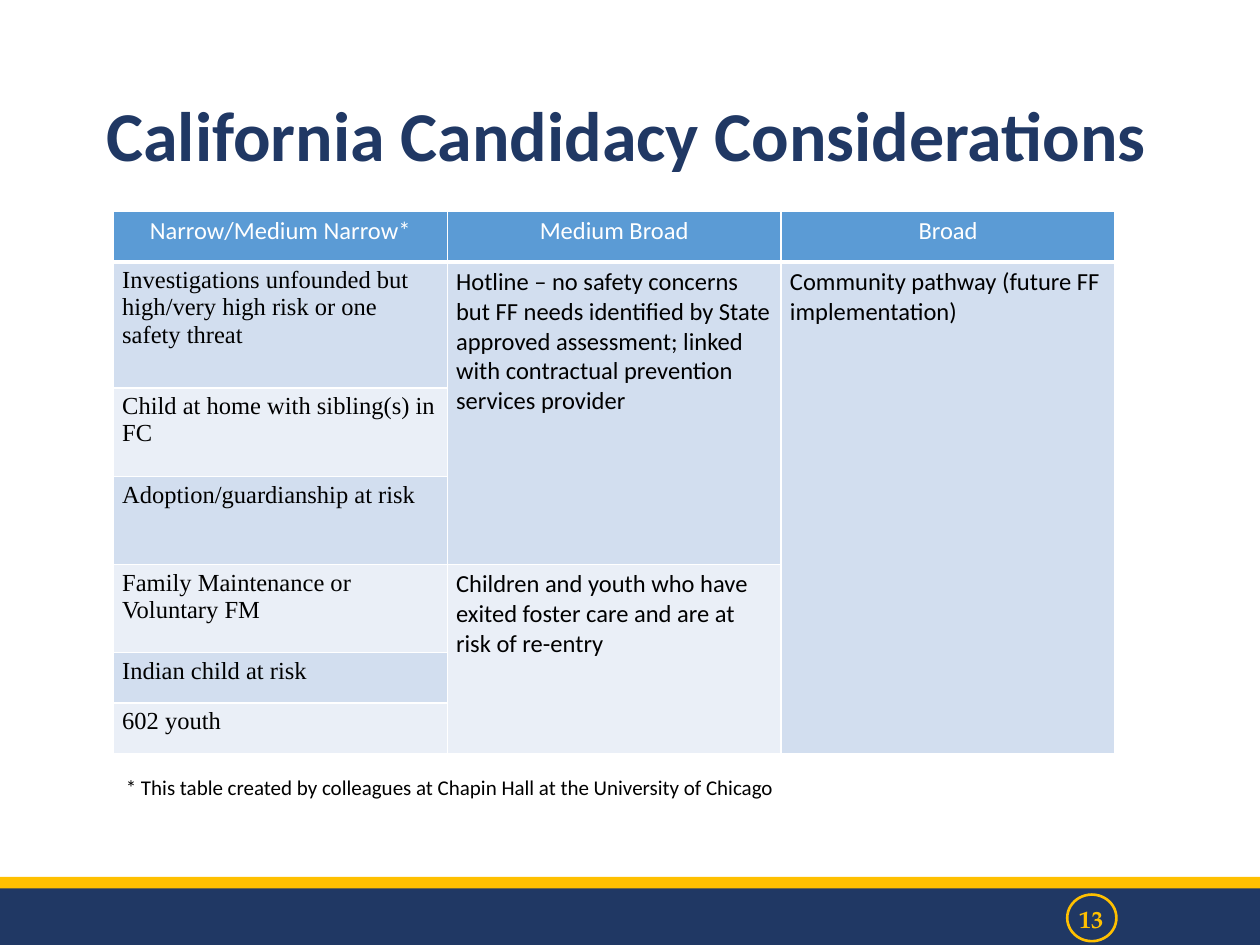
import dataclasses

import lxml.etree
import pptx
import pptx.dml.color
import pptx.enum.shapes
import pptx.enum.text
import pptx.oxml.ns
import pptx.util

Inches = pptx.util.Inches
Align = pptx.enum.text.PP_ALIGN
Anchor = pptx.enum.text.MSO_ANCHOR
Preset = pptx.enum.shapes.MSO_SHAPE


@dataclasses.dataclass(frozen=True)
class Theme:
    sans: str = "Calibri"
    serif: str = "Times New Roman"
    number_font: str = "TeX Gyre Pagella"
    navy: str = "203864"
    gold: str = "FFC000"
    white: str = "FFFFFF"
    black: str = "000000"
    header: str = "5B9BD5"
    bands: tuple = ("D2DEEF", "EAEFF7")
    title_size: int = 40
    body_size: int = 14
    note_size: int = 12
    thin_border: int = 1
    header_border: int = 3


def rgb(color):
    return pptx.dml.color.RGBColor.from_string(color)


class SlideBuilder:
    def __init__(self, slide, theme):
        self.slide = slide
        self.theme = theme

    def set_text(self, frame, text, size, color, font, bold=False, align=Align.LEFT):
        frame.text = text
        frame.word_wrap = True
        paragraph = frame.paragraphs[0]
        paragraph.alignment = align
        for run in paragraph.runs:
            run.font.size = pptx.util.Pt(size)
            run.font.name = font
            run.font.bold = bold
            run.font.color.rgb = rgb(color)
        return paragraph

    def text(self, box, text, size, color, font, anchor=Anchor.MIDDLE, **style):
        frame = self.slide.shapes.add_textbox(*map(Inches, box)).text_frame
        frame.vertical_anchor = anchor
        return self.set_text(frame, text, size, color, font, **style)

    def shape(self, preset, box, fill=None, line=None):
        shape = self.slide.shapes.add_shape(preset, *map(Inches, box))
        shape.shadow.inherit = False
        if fill:
            shape.fill.solid()
            shape.fill.fore_color.rgb = rgb(fill)
        else:
            shape.fill.background()
        if line:
            shape.line.color.rgb = rgb(line)
            shape.line.width = pptx.util.Pt(1.5)
        else:
            shape.line.fill.background()

    def borders(self, cell, bottom):
        properties = cell._tc.get_or_add_tcPr()
        qn = pptx.oxml.ns.qn
        for side in "LRTB":
            width = bottom if side == "B" else self.theme.thin_border
            line = lxml.etree.SubElement(
                properties, qn(f"a:ln{side}"), w=str(pptx.util.Pt(width)))
            fill = lxml.etree.SubElement(line, qn("a:solidFill"))
            lxml.etree.SubElement(fill, qn("a:srgbClr"), val=self.theme.white)

    def cell(self, cell, fill, bottom):
        self.borders(cell, bottom)
        cell.fill.solid()
        cell.fill.fore_color.rgb = rgb(fill)
        cell.margin_left = cell.margin_right = Inches(0.07)
        cell.margin_top = cell.margin_bottom = Inches(0.04)

    def table(self, left, top, column_width, row_heights, headings, entries):
        theme = self.theme
        rows, columns = len(row_heights), len(headings)
        table = self.slide.shapes.add_table(
            rows, columns, Inches(left), Inches(top),
            Inches(column_width * columns), Inches(sum(row_heights))).table
        for column in table.columns:
            column.width = Inches(column_width)
        for row, height in zip(table.rows, row_heights):
            row.height = Inches(height)
        for r in range(rows):
            fill = theme.bands[(r - 1) % 2] if r else theme.header
            bottom = theme.thin_border if r else theme.header_border
            for c in range(columns):
                self.cell(table.cell(r, c), fill, bottom)
        for c, heading in enumerate(headings):
            self.set_text(table.cell(0, c).text_frame, heading, theme.body_size,
                          theme.white, theme.sans, align=Align.CENTER)
        for c, column_entries in enumerate(entries):
            font = theme.sans if c else theme.serif
            r = 1
            for text, span in column_entries:
                cell = table.cell(r, c)
                if span > 1:
                    cell.merge(table.cell(r + span - 1, c))
                self.set_text(cell.text_frame, text, theme.body_size, theme.black, font)
                r += span


def main():
    deck = pptx.Presentation()
    deck.slide_width, deck.slide_height = Inches(10), Inches(7.5)
    theme = Theme()
    page = SlideBuilder(deck.slides.add_slide(deck.slide_layouts[6]), theme)

    page.shape(Preset.RECTANGLE, (0, 7.04, 10, 0.46), fill=theme.navy)
    page.shape(Preset.RECTANGLE, (0, 6.96, 10, 0.09), fill=theme.gold)
    page.text((8.12, 7.09, 1.08, 0.4), "13", theme.body_size, theme.gold,
              theme.number_font, bold=True, align=Align.CENTER)
    page.shape(Preset.OVAL, (8.47, 7.1, 0.39, 0.37), line=theme.gold)

    title = page.text((0.66, 0, 8.62, 1.45), "California Candidacy Considerations",
                      theme.title_size, theme.navy, theme.sans,
                      anchor=Anchor.BOTTOM, bold=True, align=Align.CENTER)
    title.line_spacing = 0.9

    narrow = [
        ("Investigations unfounded but high/very high risk or one safety threat", 1),
        ("Child at home with sibling(s) in FC", 1),
        ("Adoption/guardianship at risk", 1),
        ("Family Maintenance or Voluntary FM", 1),
        ("Indian child at risk", 1),
        ("602 youth", 1),
    ]
    medium_broad = [
        ("Hotline – no safety concerns but FF needs identified by State approved "
         "assessment; linked with contractual prevention services provider", 3),
        ("Children and youth who have exited foster care and are at risk of re-entry", 3),
    ]
    broad = [("Community pathway (future FF implementation)", 6)]
    page.table(0.9, 1.68, 2.65, (0.4, 1, 0.7, 0.7, 0.7, 0.4, 0.4),
               ("Narrow/Medium Narrow*", "Medium Broad", "Broad"),
               (narrow, medium_broad, broad))

    page.text((0.9, 6.05, 5.48, 0.4),
              "* This table created by colleagues at Chapin Hall at the University of Chicago",
              theme.note_size, theme.black, theme.sans)
    deck.save("out.pptx")


if __name__ == "__main__":
    main()
